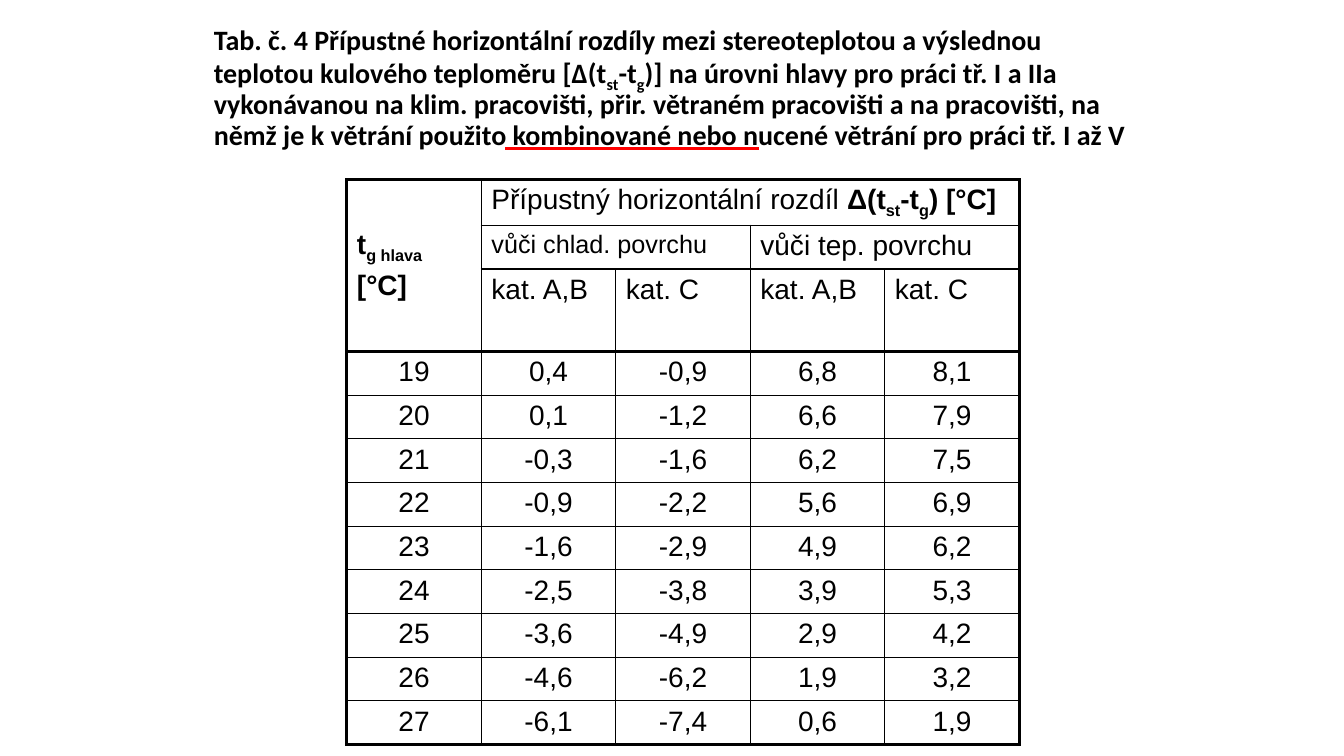
from lxml import etree
from pptx import Presentation
from pptx.dml.color import RGBColor
from pptx.enum.shapes import MSO_CONNECTOR
from pptx.enum.text import MSO_ANCHOR, MSO_AUTO_SIZE, PP_ALIGN
from pptx.oxml.ns import qn
from pptx.util import Inches, Pt

STRAIGHT = MSO_CONNECTOR.STRAIGHT
MIDDLE, TOP = MSO_ANCHOR.MIDDLE, MSO_ANCHOR.TOP
LEFT, CENTER = PP_ALIGN.LEFT, PP_ALIGN.CENTER
NO_AUTOFIT = MSO_AUTO_SIZE.NONE

BLACK, RED = "000000", "FF0000"
THIN, THICK = 1, 2.25
TITLE_FONT = {"name": "Calibri", "size": Pt(20), "bold": True}
BOLD_FONT = {"name": "Arial", "size": Pt(20), "bold": True}
TABLE_FONT = {**BOLD_FONT, "bold": False}
SMALL_FONT = {**TABLE_FONT, "size": Pt(18)}

# Text pieces alternate between normal and subscript.
TITLE = [
    "Tab. č. 4 Přípustné horizontální rozdíly mezi stereoteplotou a výslednou "
    "teplotou kulového teploměru [Δ(t", "st", "-t", "g",
    ")] na úrovni hlavy pro práci tř. I a IIa vykonávanou na klim. pracovišti, "
    "přir. větraném pracovišti a na pracovišti, na němž je k větrání použito "
    "kombinované nebo nucené větrání pro práci tř. I až V",
]
DIFFERENCE = ["Δ(t", "st", "-t", "g", ") [°C]"]
CATEGORIES = ["kat. A,B", "kat. C"] * 2
LIMITS = [
    ("19", "0,4", "-0,9", "6,8", "8,1"),
    ("20", "0,1", "-1,2", "6,6", "7,9"),
    ("21", "-0,3", "-1,6", "6,2", "7,5"),
    ("22", "-0,9", "-2,2", "5,6", "6,9"),
    ("23", "-1,6", "-2,9", "4,9", "6,2"),
    ("24", "-2,5", "-3,8", "3,9", "5,3"),
    ("25", "-3,6", "-4,9", "2,9", "4,2"),
    ("26", "-4,6", "-6,2", "1,9", "3,2"),
    ("27", "-6,1", "-7,4", "0,6", "1,9"),
]
HEADER_ROWS = 3
ROWS, COLUMNS = HEADER_ROWS + len(LIMITS), len(LIMITS[0])


def color(hex_value):
    return RGBColor.from_string(hex_value)


def add_pieces(paragraph, pieces, font_format):
    """Add runs, lowering every second piece to a subscript."""
    for index, piece in enumerate(pieces):
        run = paragraph.add_run()
        run.text = piece
        for attribute, value in font_format.items():
            setattr(run.font, attribute, value)
        run.font.color.rgb = color(BLACK)
        if index % 2:
            run._r.get_or_add_rPr().set("baseline", "-25000")


def add_title(slide, left, top, width, height):
    title = slide.shapes.title
    title.left, title.top = Inches(left), Inches(top)
    title.width, title.height = Inches(width), Inches(height)
    frame = title.text_frame
    frame.word_wrap = True
    frame.auto_size = NO_AUTOFIT
    frame.vertical_anchor = MIDDLE
    heading = frame.paragraphs[0]
    heading.alignment = LEFT
    heading.line_spacing = 0.9
    add_pieces(heading, TITLE, TITLE_FONT)


def set_borders(cell, widths):
    """Draw the cell's borders, widths given in points by side letter."""
    properties = cell._tc.get_or_add_tcPr()
    for position, (side, width) in enumerate(widths.items()):
        border = etree.Element(qn(f"a:ln{side}"), w=str(Pt(width)))
        fill = etree.SubElement(border, qn("a:solidFill"))
        etree.SubElement(fill, qn("a:srgbClr"), val=BLACK)
        properties.insert(position, border)


def format_cell(cell, row, column):
    """Clear the fill; thicken the table's frame and the line under its header."""
    cell.fill.background()
    if cell.is_spanned:
        return
    row_after = row + (cell.span_height if cell.is_merge_origin else 1)
    column_after = column + (cell.span_width if cell.is_merge_origin else 1)
    thick_rows = (0, HEADER_ROWS, ROWS)
    set_borders(cell, {
        "L": THICK if column == 0 else THIN,
        "R": THICK if column_after == COLUMNS else THIN,
        "T": THICK if row in thick_rows else THIN,
        "B": THICK if row_after in thick_rows else THIN,
    })


def fill_cell(cell, pieces, font_format=TABLE_FONT, alignment=LEFT):
    paragraph = cell.text_frame.paragraphs[0]
    paragraph.alignment = alignment
    add_pieces(paragraph, pieces, font_format)
    cell.vertical_anchor = TOP


def fill_header(table):
    for first, last in (((0, 0), (2, 0)), ((0, 1), (0, 4)),
                        ((1, 1), (1, 2)), ((1, 3), (1, 4))):
        table.cell(*first).merge(table.cell(*last))

    head_temperature = table.cell(0, 0)
    fill_cell(head_temperature, ["t", "g hlava"], BOLD_FONT)
    head_temperature.vertical_anchor = MIDDLE
    unit = head_temperature.text_frame.add_paragraph()
    unit.space_before = Pt(4)
    add_pieces(unit, ["[°C]"], BOLD_FONT)

    difference = table.cell(0, 1)
    fill_cell(difference, ["Přípustný horizontální rozdíl "])
    add_pieces(difference.text_frame.paragraphs[0], DIFFERENCE, BOLD_FONT)
    fill_cell(table.cell(1, 1), ["vůči chlad. povrchu"], SMALL_FONT)
    fill_cell(table.cell(1, 3), ["vůči tep. povrchu"])
    for column, category in enumerate(CATEGORIES, 1):
        fill_cell(table.cell(2, column), [category])


def add_limits_table(slide, left, top, width, height):
    table = slide.shapes.add_table(
        ROWS, COLUMNS, Inches(left), Inches(top), Inches(width), Inches(height)
    ).table
    table.first_row = table.horz_banding = False
    fill_header(table)
    for row, limits in enumerate(LIMITS, HEADER_ROWS):
        for column, limit in enumerate(limits):
            fill_cell(table.cell(row, column), [limit], alignment=CENTER)
    for row in range(ROWS):
        for column in range(COLUMNS):
            format_cell(table.cell(row, column), row, column)


def add_underline(slide, left, top, width):
    underline = slide.shapes.add_connector(
        STRAIGHT, Inches(left), Inches(top), Inches(left + width), Inches(top)
    )
    underline.line.color.rgb = color(RED)
    underline.line.width = Pt(THICK)
    etree.SubElement(underline._element.spPr, qn("a:effectLst"))


def main():
    presentation = Presentation()
    presentation.slide_width = Inches(13.33)
    presentation.slide_height = Inches(7.5)
    slide = presentation.slides.add_slide(presentation.slide_layouts[5])
    add_title(slide, 2.02, 0.21, 9.37, 1.34)
    add_limits_table(slide, 3.44, 1.78, 6.67, 5.2)
    add_underline(slide, 5.01, 1.47, 2.52)
    presentation.save("out.pptx")


if __name__ == "__main__":
    main()
